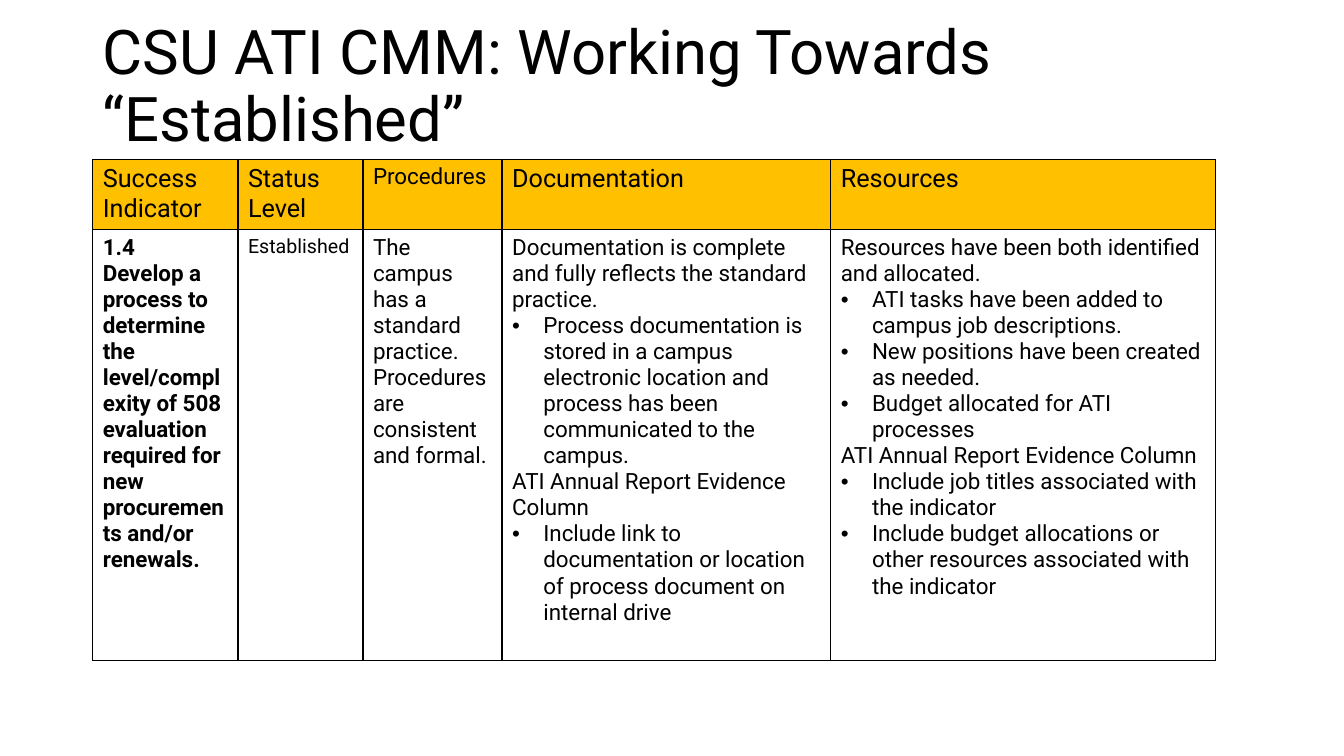
from lxml import etree
from pptx import Presentation
from pptx.dml.color import RGBColor
from pptx.enum.text import MSO_ANCHOR
from pptx.oxml.ns import qn
from pptx.util import Inches, Pt

MIDDLE = MSO_ANCHOR.MIDDLE
BLACK = RGBColor(0x00, 0x00, 0x00)
AMBER = RGBColor(0xFF, 0xC0, 0x00)
FONT = "Roboto"

LEFT = 0.92
TABLE_TOP = 1.58
COLUMNS = [1.44, 1.24, 1.38, 3.26, 3.82]
ROWS = [0.68, 4.27]
BULLET = "•"
BULLET_INDENT = 0.31

HEADERS = [
    ("Success Indicator", 18),
    ("Status Level", 18),
    ("Procedures", 16),
    ("Documentation", 18),
    ("Resources", 18),
]

# Paragraphs of each body cell with their format; a leading bullet marks a list item.
BODY = [
    (["1.4",
      "Develop a process to determine the level/complexity of 508 evaluation "
      "required for new procurements and/or renewals."],
     {"size": 16, "bold": True}),
    (["Established"], {"size": 14}),
    (["The campus has a standard practice. Procedures are consistent and formal."],
     {"size": 16}),
    (["Documentation is complete and fully reflects the standard practice.",
      "• Process documentation is stored in a campus electronic location and "
      "process has been communicated to the campus.",
      "ATI Annual Report Evidence Column",
      "• Include link to documentation or location of process document on "
      "internal drive"],
     {"size": 16}),
    (["Resources have been both identified and allocated.",
      "• ATI tasks have been added to campus job descriptions.",
      "• New positions have been created as needed.",
      "• Budget allocated for ATI processes",
      "ATI Annual Report Evidence Column",
      "• Include job titles associated with the indicator",
      "• Include budget allocations or other resources associated with the indicator"],
     {"size": 16}),
]


def add_bullet(p):
    pPr = p._p.get_or_add_pPr()
    pPr.set("marL", str(Inches(BULLET_INDENT)))
    pPr.set("indent", str(-Inches(BULLET_INDENT)))
    etree.SubElement(pPr, qn("a:buFont"), typeface="Arial")
    etree.SubElement(pPr, qn("a:buChar"), char=BULLET)


def write(tf, paragraphs, size, bold=False, line_spacing=None):
    for i, text in enumerate(paragraphs):
        p = tf.add_paragraph() if i else tf.paragraphs[0]
        if line_spacing:
            p.line_spacing = line_spacing
        if text.startswith(BULLET):
            add_bullet(p)
        r = p.add_run()
        r.text = text.removeprefix(BULLET).strip()
        r.font.name = FONT
        r.font.size = Pt(size)
        r.font.bold = bold
        r.font.color.rgb = BLACK


def add_borders(cell, width=1):
    tcPr = cell._tc.get_or_add_tcPr()
    for i, side in enumerate(("lnL", "lnR", "lnT", "lnB")):
        ln = etree.Element(qn(f"a:{side}"), w=str(Pt(width)))
        fill = etree.SubElement(ln, qn("a:solidFill"))
        etree.SubElement(fill, qn("a:srgbClr"), val=str(BLACK))
        tcPr.insert(i, ln)


def fill_cell(cell, paragraphs, fill=None, **text_format):
    if fill is None:
        cell.fill.background()
    else:
        cell.fill.solid()
        cell.fill.fore_color.rgb = fill
    add_borders(cell)
    write(cell.text_frame, paragraphs, **text_format)


def add_title(s, text):
    box = s.shapes.add_textbox(Inches(LEFT), Inches(0.15), Inches(11.5), Inches(1.45))
    tf = box.text_frame
    tf.word_wrap = True
    tf.vertical_anchor = MIDDLE
    write(tf, [text], size=44, line_spacing=0.9)


def add_maturity_table(s):
    frame = s.shapes.add_table(len(ROWS), len(COLUMNS), Inches(LEFT), Inches(TABLE_TOP),
                               Inches(sum(COLUMNS)), Inches(sum(ROWS)))
    table = frame.table
    table.horz_banding = False
    for column, width in zip(table.columns, COLUMNS):
        column.width = Inches(width)
    for row, height in zip(table.rows, ROWS):
        row.height = Inches(height)
    for c, (header, size) in enumerate(HEADERS):
        fill_cell(table.cell(0, c), [header], fill=AMBER, size=size)
    for c, (paragraphs, text_format) in enumerate(BODY):
        fill_cell(table.cell(1, c), paragraphs, **text_format)


def main():
    prs = Presentation()
    prs.slide_width, prs.slide_height = Inches(13.33), Inches(7.5)
    s = prs.slides.add_slide(prs.slide_layouts[6])
    add_title(s, "CSU ATI CMM: Working Towards “Established”")
    add_maturity_table(s)
    prs.save("out.pptx")


if __name__ == "__main__":
    main()
